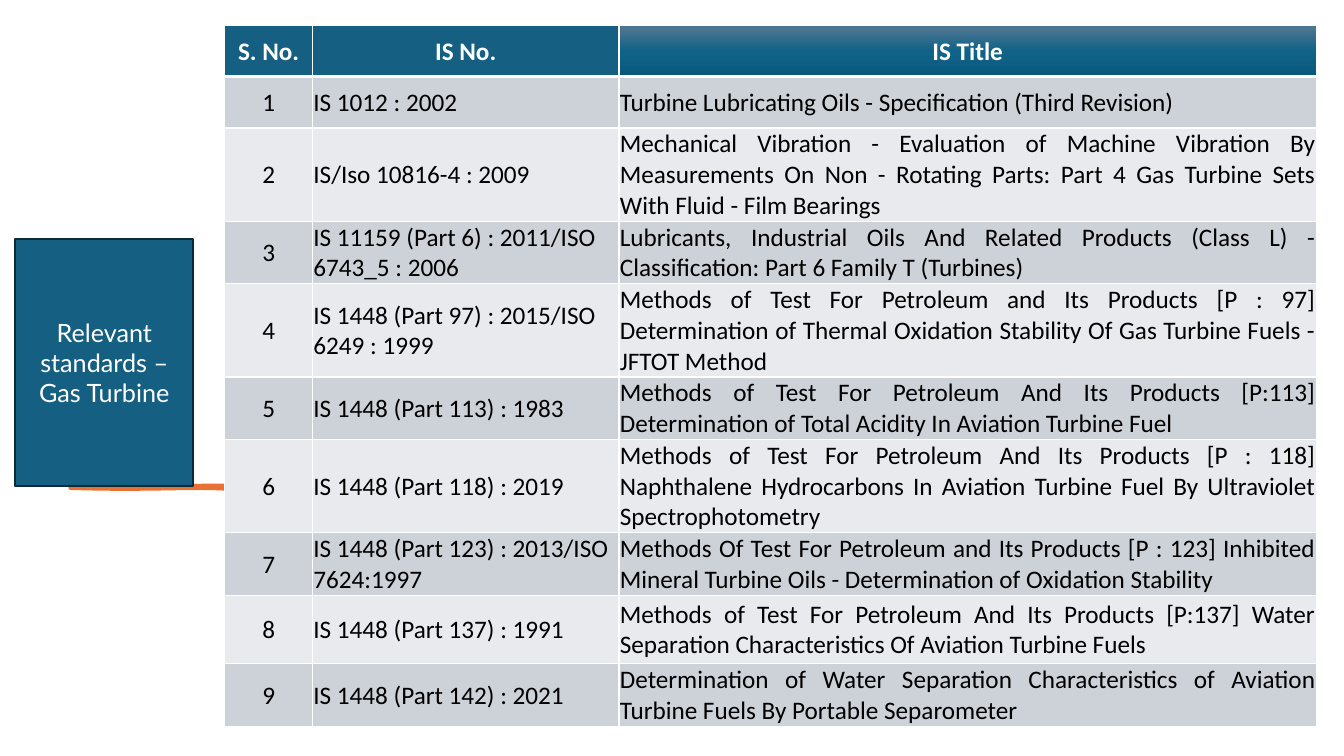
from dataclasses import dataclass

from pptx import Presentation
from pptx.dml.color import RGBColor
from pptx.enum.text import MSO_ANCHOR, MSO_AUTO_SIZE, PP_ALIGN
from pptx.oxml import parse_xml
from pptx.oxml.ns import nsdecls
from pptx.slide import Slide
from pptx.table import Table, _Cell
from pptx.util import Pt

COLOURS = {
    "white": "FFFFFF",
    "black": "000000",
    "teal": "156082",
    "outline": "092A39",
    "orange": "E97132",
    "dark_band": "CCD2D8",
    "light_band": "E8EAED",
    "gradient_top": "4C7591",
    "gradient_middle": "106287",
    "gradient_bottom": "09597D",
}
COLUMN_WIDTHS = (62.6, 218.9, 498.3)
COLUMN_ALIGNMENTS = (PP_ALIGN.CENTER, PP_ALIGN.LEFT, PP_ALIGN.JUSTIFY)
HEADINGS = ("S. No.", "IS No.", "IS Title")
HEADER_HEIGHT = 36.7
TABLE_HEIGHT = 494.6
HEADER_GRADIENT = ((6, "gradient_top"), (50, "gradient_middle"), (100, "gradient_bottom"))


@dataclass
class Standard:
    number: str
    title: str
    height: float


@dataclass
class Curve:
    first_control: tuple[float, float]
    second_control: tuple[float, float]
    end: tuple[float, float]


STANDARDS = [
    Standard("IS 1012 : 2002", "Turbine Lubricating Oils - Specification (Third Revision)", 36.7),
    Standard("IS/Iso 10816-4 : 2009",
             "Mechanical Vibration - Evaluation of Machine Vibration By Measurements On Non - "
             "Rotating Parts: Part 4 Gas Turbine Sets With Fluid - Film Bearings", 57.6),
    Standard("IS 11159 (Part 6) : 2011/ISO 6743_5 : 2006",
             "Lubricants, Industrial Oils And Related Products (Class L) - "
             "Classification: Part 6 Family T (Turbines)", 38.9),
    Standard("IS 1448 (Part 97) : 2015/ISO 6249 : 1999",
             "Methods of Test For Petroleum and Its Products [P : 97] Determination of "
             "Thermal Oxidation Stability Of Gas Turbine Fuels - JFTOT Method", 39.6),
    Standard("IS 1448 (Part 113) : 1983",
             "Methods of Test For Petroleum And Its Products [P:113] "
             "Determination of Total Acidity In Aviation Turbine Fuel", 38.9),
    Standard("IS 1448 (Part 118) : 2019",
             "Methods of Test For Petroleum And Its Products [P : 118] Naphthalene "
             "Hydrocarbons In Aviation Turbine Fuel By Ultraviolet Spectrophotometry", 57.6),
    Standard("IS 1448 (Part 123) : 2013/ISO 7624:1997",
             "Methods Of Test For Petroleum and Its Products [P : 123] Inhibited "
             "Mineral Turbine Oils - Determination of Oxidation Stability", 36),
    Standard("IS 1448 (Part 137) : 1991",
             "Methods of Test For Petroleum And Its Products [P:137] "
             "Water Separation Characteristics Of Aviation Turbine Fuels", 49),
    Standard("IS 1448 (Part 142) : 2021",
             "Determination of Water Separation Characteristics of Aviation "
             "Turbine Fuels By Portable Separometer", 38.9),
]

BRUSH_START = (50.4, 347)
BRUSH_CURVES = [
    Curve((69.8, 345.6), (87.1, 345.6), (99.4, 347)),
    Curve((111.6, 348.5), (127.4, 347), (150.5, 347)),
    Curve((173.5, 347), (187.2, 347.8), (204.5, 347)),
    Curve((221.8, 346.3), (244.1, 348.5), (258.5, 347)),
    Curve((272.9, 346.3), (296.6, 347.8), (306.7, 347)),
    Curve((306.7, 347.8), (306.7, 348.5), (306.7, 348.5)),
    Curve((293.8, 349.2), (262.1, 347.8), (250.6, 348.5)),
    Curve((239, 349.2), (218.9, 346.3), (194.4, 348.5)),
    Curve((169.2, 350.6), (166.3, 348.5), (143.3, 348.5)),
    Curve((119.5, 348.5), (95, 349.9), (50.4, 348.5)),
]


def colour(name: str) -> RGBColor:
    return RGBColor.from_string(COLOURS[name])


def add_brush_line(page: Slide) -> None:
    steps = 6
    points = []
    start = BRUSH_START
    for curve in BRUSH_CURVES:
        for step in range(1, steps + 1):
            t = step / steps
            points.append(tuple(
                Pt((1 - t) ** 3 * a + 3 * (1 - t) ** 2 * t * b + 3 * (1 - t) * t ** 2 * c + t ** 3 * d)
                for a, b, c, d in zip(start, curve.first_control, curve.second_control, curve.end)
            ))
        start = curve.end
    builder = page.shapes.build_freeform(Pt(BRUSH_START[0]), Pt(BRUSH_START[1]))
    builder.add_line_segments(points, close=True)
    brush = builder.convert_to_shape()
    brush.shadow.inherit = False
    brush.fill.solid()
    brush.fill.fore_color.rgb = colour("orange")
    brush.line.color.rgb = colour("orange")
    brush.line.width = Pt(3)


def set_borders(cell: _Cell, bottom_width: float) -> None:
    properties = cell._tc.get_or_add_tcPr()
    for index, side in enumerate("LRTB"):
        width = Pt(bottom_width if side == "B" else 1)
        properties.insert(index, parse_xml(
            f'<a:ln{side} {nsdecls("a")} w="{width}"><a:solidFill>'
            f'<a:srgbClr val="{COLOURS["white"]}"/></a:solidFill></a:ln{side}>'
        ))


def set_gradient(cell: _Cell) -> None:
    stops = "".join(
        f'<a:gs pos="{percent * 1000}"><a:srgbClr val="{COLOURS[name]}"/></a:gs>'
        for percent, name in HEADER_GRADIENT
    )
    cell.fill.background()
    properties = cell._tc.get_or_add_tcPr()
    properties.replace(properties[-1], parse_xml(
        f'<a:gradFill {nsdecls("a")}><a:gsLst>{stops}</a:gsLst><a:lin ang="5400000" scaled="0"/></a:gradFill>'
    ))


def fill_row(table: Table, row: int, texts: tuple[str, ...], height: float) -> None:
    header = row == 0
    band = "teal" if header else "dark_band" if row % 2 else "light_band"
    table.rows[row].height = Pt(height)
    for column, text in enumerate(texts):
        cell = table.cell(row, column)
        cell.text = text
        cell.vertical_anchor = MSO_ANCHOR.MIDDLE
        cell.margin_left = cell.margin_right = cell.margin_top = Pt(0.7)
        cell.margin_bottom = Pt(0)
        para = cell.text_frame.paragraphs[0]
        para.alignment = PP_ALIGN.CENTER if header else COLUMN_ALIGNMENTS[column]
        para.font.name = "Calibri"
        para.font.size = Pt(18)
        para.font.bold = header
        para.font.color.rgb = colour("white" if header else "black")
        cell.fill.solid()
        cell.fill.fore_color.rgb = colour(band)
        set_borders(cell, 3 if header else 1)


def add_standards_table(page: Slide) -> None:
    frame = page.shapes.add_table(
        len(STANDARDS) + 1, len(HEADINGS), Pt(160.6), Pt(18), Pt(sum(COLUMN_WIDTHS)), Pt(TABLE_HEIGHT)
    )
    table = frame.table
    for column, width in zip(table.columns, COLUMN_WIDTHS):
        column.width = Pt(width)
    fill_row(table, 0, HEADINGS, HEADER_HEIGHT)
    set_gradient(table.cell(0, 2))
    for row, standard in enumerate(STANDARDS, 1):
        fill_row(table, row, (str(row), standard.number, standard.title), standard.height)
    frame.height = Pt(TABLE_HEIGHT)


def format_title(page: Slide) -> None:
    title = page.shapes.title
    title.left, title.top, title.width, title.height = Pt(10.8), Pt(170.6), Pt(127.4), Pt(176.4)
    title._element.spPr.insert(1, parse_xml(
        f'<a:prstGeom {nsdecls("a")} prst="homePlate"><a:avLst/></a:prstGeom>'
    ))
    title.fill.solid()
    title.fill.fore_color.rgb = colour("teal")
    title.line.color.rgb = colour("outline")
    title.line.width = Pt(1.5)
    box = title.text_frame
    box.text = "Relevant standards – Gas Turbine"
    box.word_wrap = True
    box.auto_size = MSO_AUTO_SIZE.NONE
    box.vertical_anchor = MSO_ANCHOR.MIDDLE
    para = box.paragraphs[0]
    para.alignment = PP_ALIGN.CENTER
    para.font.name = "Lato"
    para.font.size = Pt(18)
    para.font.color.rgb = colour("white")
    page.shapes._spTree.append(title._element)


def main() -> None:
    deck = Presentation()
    deck.slide_width, deck.slide_height = Pt(960), Pt(540)
    page = deck.slides.add_slide(deck.slide_layouts[5])
    add_brush_line(page)
    add_standards_table(page)
    format_title(page)
    deck.save("out.pptx")


if __name__ == "__main__":
    main()
